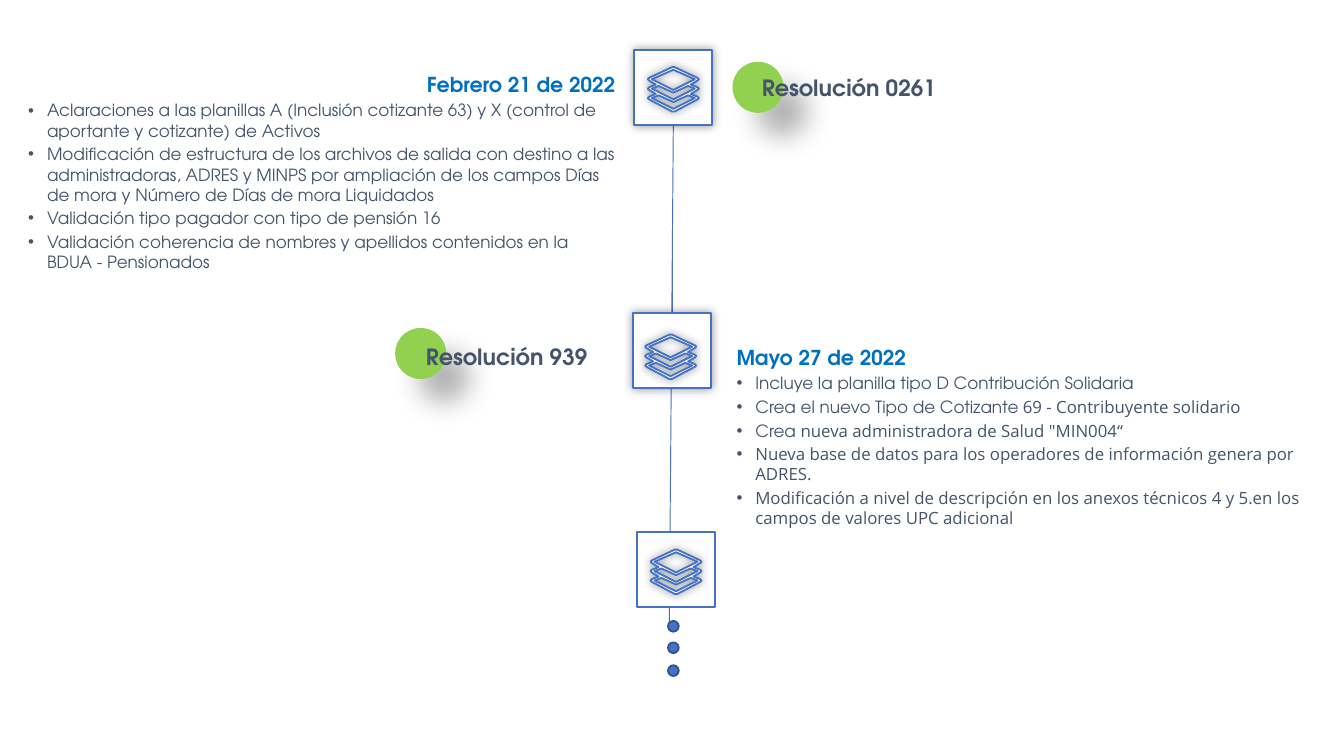
from lxml import etree
from pptx import Presentation
from pptx import util as u
from pptx.dml.color import RGBColor
from pptx.enum import shapes, text
from pptx.oxml.ns import qn

PX = 9144
HEAD, SANS = "TeX Gyre Adventor", "Open Sans"
BLUE, EDGE, SKY, GREEN, SLATE, WHITE = "4472C4", "325491", "0070C0", "92D050", "44546A", "FFFFFF"
GLOW = ("000000", 40, 5, 0, 0)
DROP = ("000000", 30, 15, 18, 45)

SIDE = [(18, 0), (1, 8), (0, 9), (1, 10), (6, 13), (1, 15), (0, 16), (1, 17),
        (6, 20), (1, 22), (0, 23), (1, 24), (18, 33)]
BAND = [(19, 24), (3, 16), (8, 14), (19, 19), (30, 14), (35, 16)]
RINGS = [
    SIDE + [(38 - x, y) for x, y in reversed(SIDE)],
    [(3, 9), (19, 2), (35, 9), (19, 17)],
    BAND,
    [(x, y + 7) for x, y in BAND],
]

FEB = [
    ("Aclaraciones a las planillas A (Inclusión cotizante 63) y X (control de aportante y cotizante) de Activos", ""),
    ("Modificación de estructura de los archivos de salida con destino a las administradoras, ADRES y MINPS "
     "por ampliación de los campos Días de mora y Número de Días de mora Liquidados", ""),
    ("Validación tipo pagador con tipo de pensión 16", ""),
    ("Validación coherencia de nombres y apellidos contenidos en la BDUA - Pensionados", ""),
]
MAY = [
    ("Incluye la planilla tipo D Contribución Solidaria", ""),
    ("Crea el nuevo Tipo de Cotizante ", "69 - Contribuyente solidario"),
    ("Crea ", "nueva administradora de Salud \"MIN004“"),
    ("", "Nueva base de datos para los operadores de información genera por ADRES."),
    ("", "Modificación a nivel de descripción en los anexos técnicos 4 y 5.en los campos de valores UPC adicional"),
]


def rgb(code):
    """Turn a hex string into a colour."""
    return RGBColor.from_string(code)


class Board:
    """Style and current slide of the timeline."""

    def __init__(self, slide):
        self.slide = slide
        self.shapes = slide.shapes

    def shade(self, shape, glow):
        """Give a shape an outer shadow, or none."""
        shape.shadow.inherit = False
        if glow:
            code, alpha, blur, dist, turn = glow
            effects = shape._element.spPr.find(qn("a:effectLst"))
            outer = etree.SubElement(effects, qn("a:outerShdw"), blurRad=str(u.Pt(blur)),
                                     dist=str(u.Pt(dist)), dir=str(turn * 60000),
                                     algn="ctr", rotWithShape="0")
            tint = etree.SubElement(outer, qn("a:srgbClr"), val=code)
            etree.SubElement(tint, qn("a:alpha"), val=str(alpha * 1000))

    def paint(self, shape, fill, line=None, glow=None):
        """Set fill, outline and shadow."""
        shape.fill.solid()
        shape.fill.fore_color.rgb = rgb(fill)
        if line:
            shape.line.color.rgb = rgb(line)
            shape.line.width = u.Pt(1)
        else:
            shape.line.fill.background()
        self.shade(shape, glow)

    def form(self, kind, x, y, w, h, fill, line=None, glow=None):
        """Draw a preset shape."""
        shape = self.shapes.add_shape(kind, x * PX, y * PX, w * PX, h * PX)
        self.paint(shape, fill, line, glow)

    def link(self, x1, y1, x2, y2):
        """Draw a thin line."""
        line = self.shapes.add_connector(shapes.MSO_CONNECTOR.STRAIGHT, x1 * PX, y1 * PX, x2 * PX, y2 * PX)
        line.line.color.rgb = rgb(BLUE)
        line.line.width = u.Pt(0.5)
        etree.SubElement(line._element.spPr, qn("a:effectLst"))

    def stack(self, x, y):
        """Draw the icon of three layers."""
        pen = self.shapes.build_freeform(*RINGS[0][0], scale=PX)
        for ring in RINGS:
            pen.move_to(*ring[0])
            pen.add_line_segments(ring[1:], close=True)
        self.paint(pen.convert_to_shape(x * PX, y * PX), WHITE, BLUE, GLOW)

    def node(self, x, y, dx, dy, glow):
        """Draw a framed icon."""
        self.form(shapes.MSO_SHAPE.RECTANGLE, x, y, 58, 56, WHITE, BLUE, glow)
        self.stack(x + dx, y + dy)

    def font(self, para, size, code, bold):
        """Style a paragraph."""
        font = para.font
        font.name, font.size, font.bold = HEAD, u.Pt(size), bold
        font.color.rgb = rgb(code)

    def label(self, words, x, y, dx, dy):
        """Draw a green disc and the name beside it."""
        self.form(shapes.MSO_SHAPE.OVAL, x, y, 38, 38, GREEN, glow=DROP)
        box = self.shapes.add_textbox((x + dx) * PX, (y + dy) * PX, 177 * PX, 30 * PX)
        frame = box.text_frame
        frame.word_wrap = True
        frame.vertical_anchor = text.MSO_ANCHOR.MIDDLE
        para = frame.paragraphs[0]
        para.text = words
        self.font(para, 12, SLATE, True)

    def notes(self, spot, x, y, h, date, items, align):
        """Fill a body placeholder with a date and a list."""
        body = self.slide.placeholders[spot]
        body.left, body.top, body.width, body.height = x * PX, y * PX, 473 * PX, h * PX
        frame = body.text_frame
        frame.word_wrap = True
        frame.auto_size = text.MSO_AUTO_SIZE.NONE
        frame.vertical_anchor = text.MSO_ANCHOR.TOP
        frame.margin_left = frame.margin_right = 18 * PX
        frame.margin_top = frame.margin_bottom = 9 * PX
        head = frame.paragraphs[0]
        head.text = date
        props = head._p.get_or_add_pPr()
        props.set("marL", "0")
        props.set("indent", "0")
        etree.SubElement(props, qn("a:buNone"))
        head.alignment, head.line_spacing, head.space_before = align, 1.2, u.Pt(0)
        self.font(head, 11, SKY, True)
        for item in items:
            para = frame.add_paragraph()
            props = para._p.get_or_add_pPr()
            props.set("marL", str(14 * PX))
            props.set("indent", str(-14 * PX))
            etree.SubElement(props, qn("a:buChar"), char="•")
            para.space_before = u.Pt(1.8)
            self.font(para, 9, SLATE, False)
            for part, face in zip(item, (HEAD, SANS)):
                if part:
                    run = para.add_run()
                    run.text = part
                    if face != HEAD:
                        run.font.name = face


def main():
    """Build the timeline slide."""
    deck = Presentation()
    deck.slide_width = 1000 * PX
    deck.slide_height = deck.slide_width * 9 // 16
    board = Board(deck.slides.add_slide(deck.slide_layouts[3]))
    title = board.shapes.title._element
    title.getparent().remove(title)

    board.link(500, 178, 500, 289)
    board.link(501, 93, 498, 463)
    board.node(471, 233, 9, 16, GLOW)
    board.node(474, 396, 10, 13, None)
    board.node(472, 37, 10, 13, GLOW)
    for y in (462, 478, 495):
        board.form(shapes.MSO_SHAPE.OVAL, 497, y, 8, 8, BLUE, EDGE)

    board.notes(1, 3, 41, 174, "Febrero 21 de 2022", FEB, text.PP_ALIGN.RIGHT)
    board.notes(2, 530, 244, 161, "Mayo 27 de 2022", MAY, text.PP_ALIGN.LEFT)
    board.label("Resolución 939", 294, 244, 13, 6)
    board.label("Resolución 0261", 545, 46, 12, 4)
    deck.save("out.pptx")


if __name__ == "__main__":
    main()
